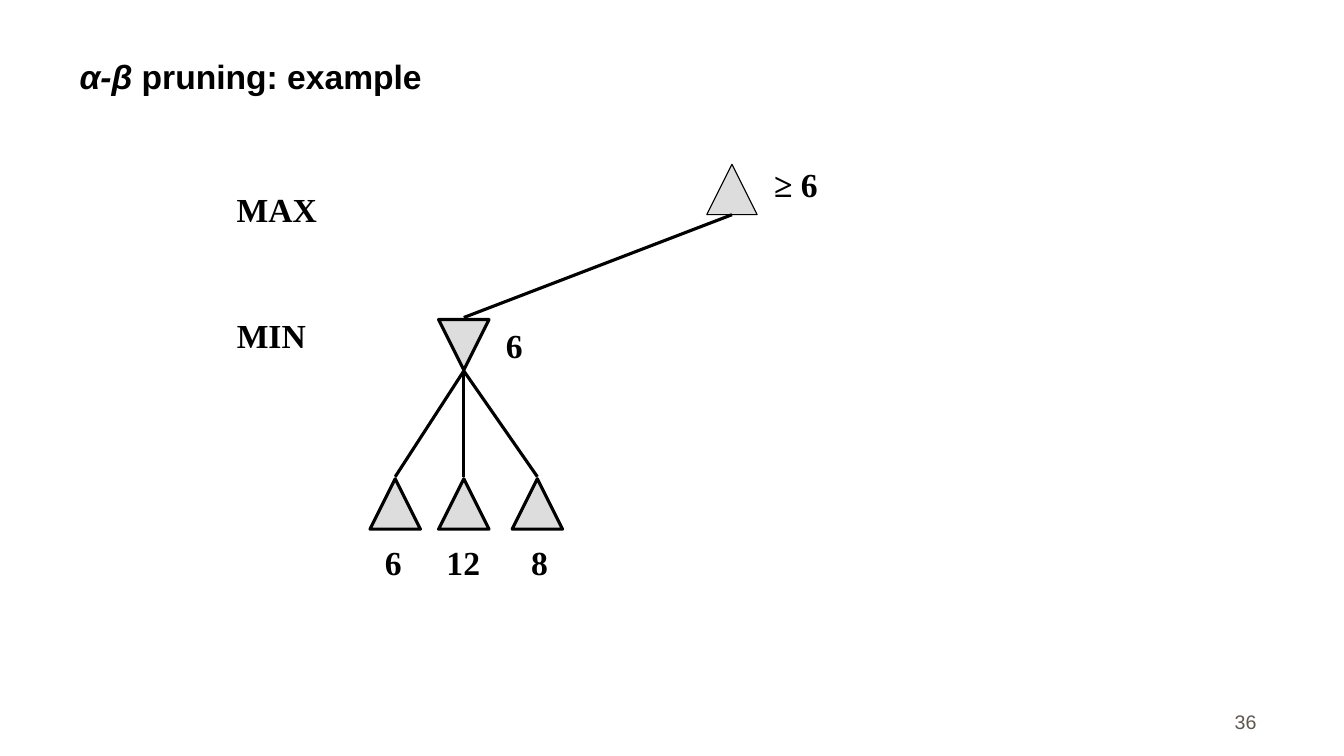
"""Draw a game tree slide showing alpha-beta pruning."""
from lxml import etree
from pptx import Presentation
from pptx import util as u
from pptx.dml.color import RGBColor
from pptx.enum import shapes, text
from pptx.oxml import ns

PX = 9144
BLACK = RGBColor(0x00, 0x00, 0x00)
NODE_GREY = RGBColor(0xDD, 0xDD, 0xDD)
NUMBER_GREY = RGBColor(0x5E, 0x57, 0x4E)
NODE_SIZE = 50
ROOT = (726, 163)
MIN_NODE = (460, 317)
LEAF_TOP = 475
LEAVES = [(392, "6", 372, 37), (460, "12", 433, 53), (533, "8", 517, 37)]
EDGE_GAP = 2


def px(*lengths):
    """Turn px lengths into EMU."""
    return [u.Emu(length * PX) for length in lengths]


def add_text(slide, runs, box, font="Times New Roman", size=24, color=BLACK, bold=True,
             align=text.PP_ALIGN.LEFT, anchor=text.MSO_ANCHOR.TOP, wrap=False):
    """Add a text box holding (wording, italic) runs in one format."""
    frame = slide.shapes.add_textbox(*px(*box)).text_frame
    frame.word_wrap = wrap
    frame.vertical_anchor = anchor
    if not wrap:
        frame.auto_size = text.MSO_AUTO_SIZE.SHAPE_TO_FIT_TEXT
    paragraph = frame.paragraphs[0]
    paragraph.alignment = align
    for wording, italic in runs:
        run = paragraph.add_run()
        run.text = wording
        run.font.name = font
        run.font.size = u.Pt(size)
        run.font.bold = bold
        run.font.italic = italic
        run.font.color.rgb = color


def add_label(slide, wording, left, top, width):
    """Add a player name or node value."""
    add_text(slide, [(wording, False)], (left, top, width, 50))


def add_node(slide, center, top, line_width=2.25, rotation=0):
    """Add a triangular tree node."""
    shape = slide.shapes.add_shape(
        shapes.MSO_SHAPE.ISOSCELES_TRIANGLE,
        *px(center - NODE_SIZE // 2, top, NODE_SIZE, NODE_SIZE))
    shape.shadow.inherit = False
    shape.rotation = rotation
    shape.fill.solid()
    shape.fill.fore_color.rgb = NODE_GREY
    shape.line.color.rgb = BLACK
    shape.line.width = u.Pt(line_width)


def add_edge(slide, start, end):
    """Join a parent node to its child."""
    edge = slide.shapes.add_connector(shapes.MSO_CONNECTOR.STRAIGHT, *px(*start, *end))
    edge.line.color.rgb = BLACK
    edge.line.width = u.Pt(2.25)
    etree.SubElement(edge._element.spPr, ns.qn("a:effectLst"))


def main():
    """Build and save the slide."""
    presentation = Presentation()
    presentation.slide_width, presentation.slide_height = px(1333, 750)
    slide = presentation.slides.add_slide(presentation.slide_layouts[6])

    add_text(slide, [("36", False)], (978, 683, 278, 50), font="Arial", size=14,
             color=NUMBER_GREY, bold=False, align=text.PP_ALIGN.RIGHT,
             anchor=text.MSO_ANCHOR.BOTTOM, wrap=True)
    add_text(slide, [("α-β", True), (" pruning: example", False)], (69, 25, 1189, 75),
             font="Arial", anchor=text.MSO_ANCHOR.BOTTOM, wrap=True)

    add_node(slide, *ROOT, line_width=0.75)
    add_node(slide, *MIN_NODE, rotation=180)
    min_center, min_top = MIN_NODE
    add_edge(slide, (ROOT[0], ROOT[1] + NODE_SIZE), (min_center, min_top - EDGE_GAP))
    for center, value, label_left, label_width in LEAVES:
        add_node(slide, center, LEAF_TOP)
        add_edge(slide, (min_center, min_top + NODE_SIZE + EDGE_GAP // 2),
                 (center, LEAF_TOP - EDGE_GAP))
        add_label(slide, value, label_left, 533, label_width)

    add_label(slide, "≥ 6", 758, 158, 63)
    add_label(slide, "6", 492, 317, 37)
    add_label(slide, "MAX", 225, 183, 100)
    add_label(slide, "MIN", 225, 308, 89)
    presentation.save("out.pptx")


if __name__ == "__main__":
    main()
